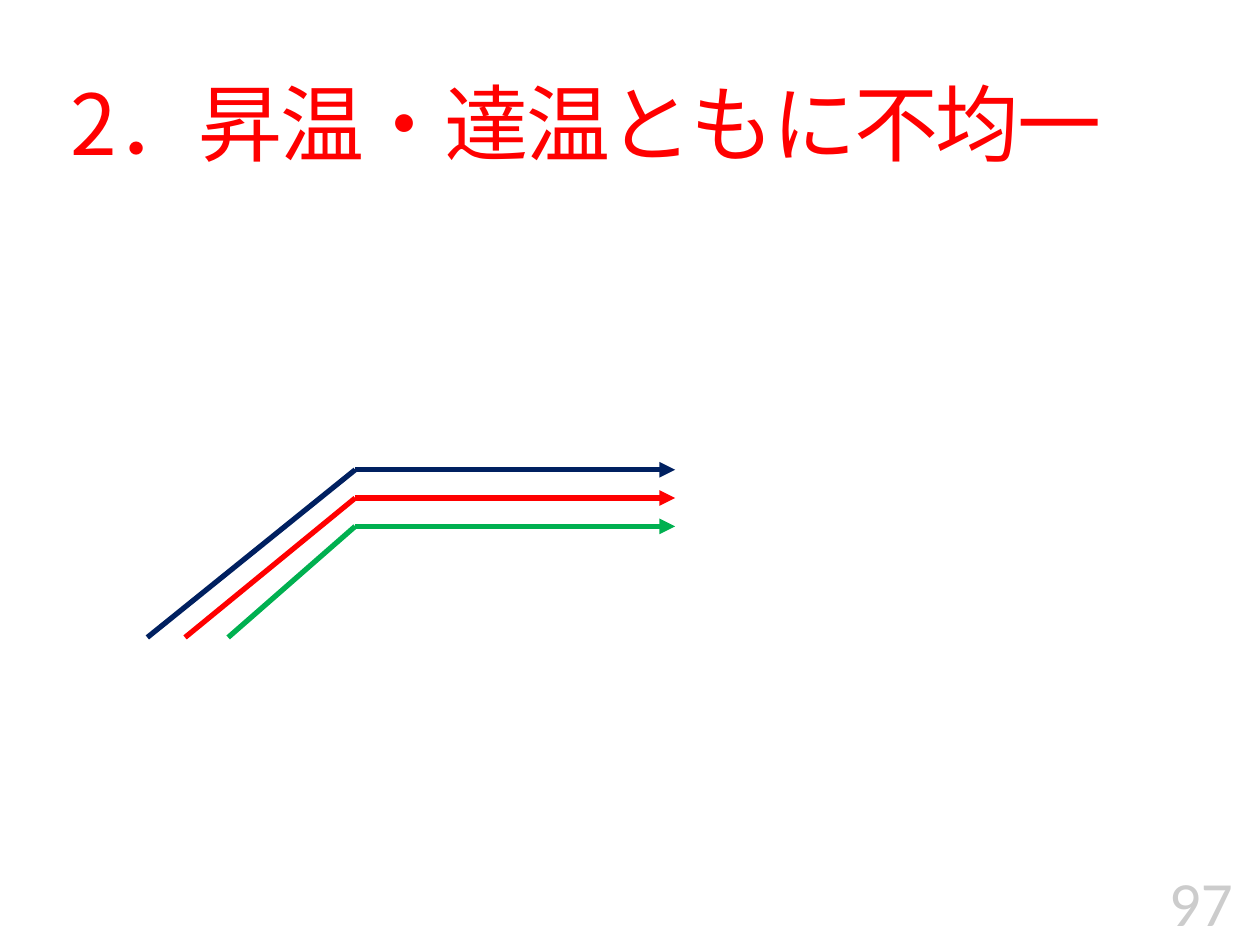
from lxml import etree
from pptx import Presentation
from pptx.dml.color import RGBColor
from pptx.enum import shapes, text
from pptx.oxml import ns
from pptx.util import Cm, Pt


def color(code):
    return RGBColor.from_string(code)


def add(node, tag, **attrs):
    return etree.SubElement(node, ns.qn(tag), attrs)


def label(slide, words, box, *, size, font, fill, align, anchor,
          lead=None, track=None, alpha=None):
    """Add a text box; track is in points, alpha in percent."""
    frame = slide.shapes.add_textbox(*map(Cm, box)).text_frame
    frame.word_wrap = True
    frame.vertical_anchor = anchor
    para = frame.paragraphs[0]
    para.alignment = align
    if lead:
        para.line_spacing = lead
    run = para.add_run()
    run.text = words
    run.font.size = Pt(size)
    run.font.name = font
    run.font.color.rgb = color(fill)
    props = run.font._element
    add(props, "a:ea", typeface=font)
    if track:
        props.set("spc", str(round(track * 100)))
    if alpha:
        add(props.find(".//" + ns.qn("a:srgbClr")), "a:alpha",
            val=str(alpha * 1000))


def line(group, start, end, fill, arrow=False):
    link = group.shapes.add_connector(
        shapes.MSO_CONNECTOR.STRAIGHT, *map(Cm, start + end))
    link.line.color.rgb = color(fill)
    link.line.width = Pt(3)
    if arrow:
        add(link.line._get_or_add_ln(), "a:tailEnd", type="triangle")
    add(link._element.spPr, "a:effectLst")


def curves(slide):
    """Draw each heating ramp with its holding arrow."""
    base, bend, stop = 12.85, 7.16, 13.61
    top, step = 9.47, 0.57
    ramps = [(2.97, "002060"), (3.73, "FF0000"), (4.6, "00B050")]
    group = slide.shapes.add_group_shape()
    levels = [top + step * i for i in range(len(ramps))]
    for (left, fill), level in zip(ramps, levels):
        line(group, (left, base), (bend, level), fill)
    for (left, fill), level in zip(ramps, levels):
        line(group, (bend, level), (stop, level), fill, arrow=True)


def main():
    deck = Presentation()
    deck.slide_width, deck.slide_height = Cm(25.4), Cm(19.05)
    slide = deck.slides.add_slide(deck.slide_layouts[6])
    label(slide, "2．昇温・達温ともに不均一", (0.18, 1.02, 23.27, 3.12),
          size=48, font="Noto Sans CJK JP", fill="FF0000",
          align=text.PP_ALIGN.CENTER, anchor=text.MSO_ANCHOR.MIDDLE,
          lead=0.9, track=-1.2)
    curves(slide)
    label(slide, "97", (19, 15.16, 6.1, 3.89),
          size=36, font="Calibri", fill="000000",
          align=text.PP_ALIGN.RIGHT, anchor=text.MSO_ANCHOR.BOTTOM, alpha=20)
    deck.save("out.pptx")


if __name__ == "__main__":
    main()
